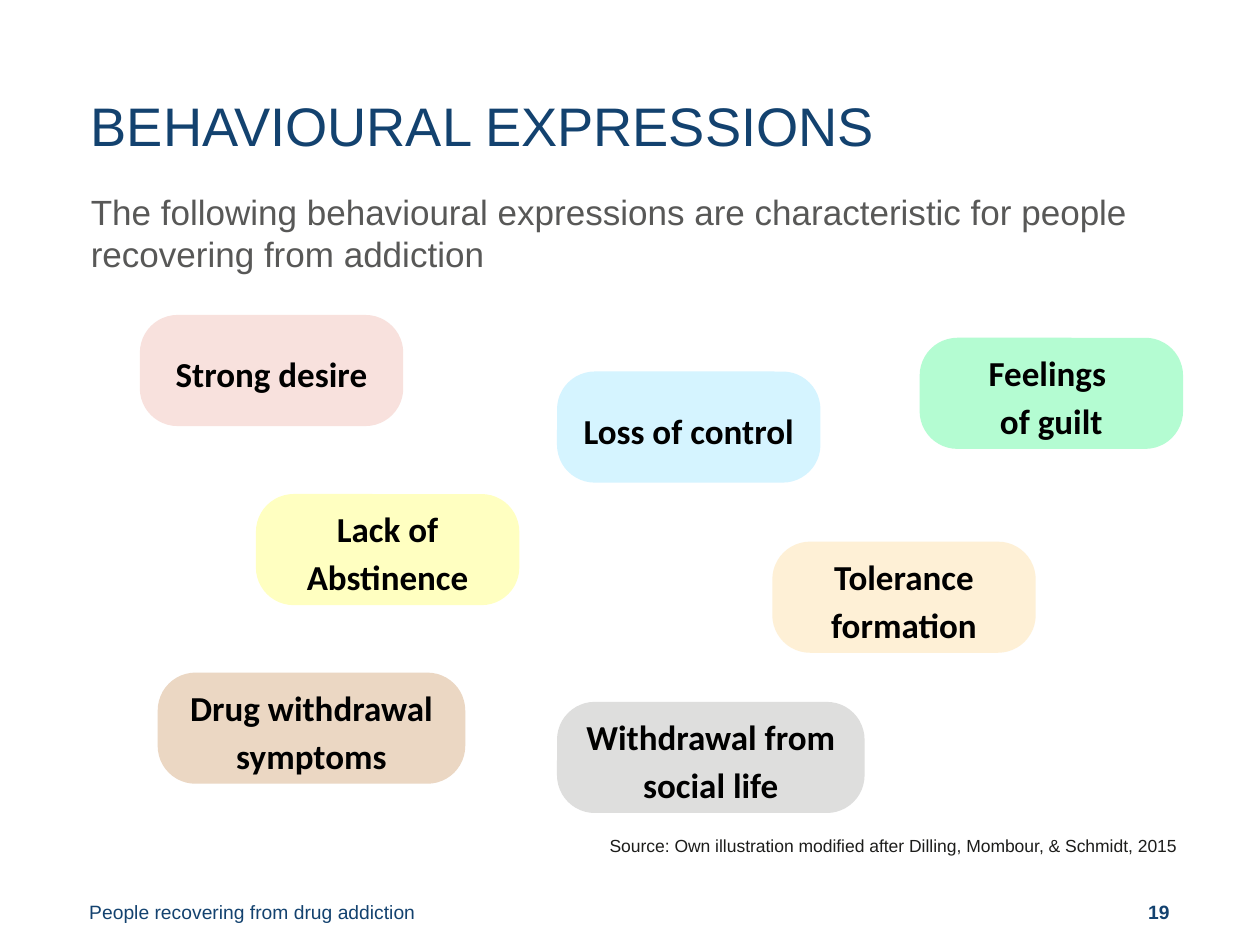
import pptx
import pptx.util
import pptx.dml.color
import pptx.enum.shapes
import pptx.enum.text
import pptx.oxml

Cm, Pt = pptx.util.Cm, pptx.util.Pt
Align = pptx.enum.text.PP_ALIGN
Anchor = pptx.enum.text.MSO_ANCHOR

# Content
TITLE = "BEHAVIOURAL EXPRESSIONS"
INTRO = ("The following behavioural expressions are characteristic "
         "for people recovering from addiction")
SOURCE = "Source: Own illustration modified after Dilling, Mombour, & Schmidt, 2015"
FOOTER = "People recovering from drug addiction"
PAGE = "19"

# Text, left and top in cm, width class, fill
EXPRESSIONS = [
    ("Strong desire", 2.82, 6.35, "narrow", "F8E1DD"),
    ("Loss of control", 11.23, 7.49, "narrow", "D5F4FF"),
    ("Lack of Abstinence", 5.16, 9.96, "narrow", "FFFFC1"),
    ("Tolerance formation", 15.57, 10.92, "narrow", "FEF0D6"),
    ("Drug withdrawal symptoms", 3.18, 13.56, "wide", "EBD7C3"),
    ("Withdrawal from social life", 11.23, 14.15, "wide", "DEDEDD"),
    ("Feelings \vof guilt", 18.54, 6.81, "narrow", "B4FCD2"),
]

# Theme: font, size, colour, bold
THEME = {
    "title": ("Arial", 31, "13426F", False),
    "intro": ("Arial", 20, "585857", False),
    "card": ("Calibri", 20, "000000", True),
    "source": ("Arial", 10, "1D1D1B", False),
    "footer": ("Arial", 11, "13426F", False),
    "page": ("Arial", 11, "13426F", True),
}
CARD_WIDTH = {"narrow": 5.31, "wide": 6.2}
CARD_HEIGHT = 2.24
CARD_ROUNDING = 0.34
MARGIN = 1.8
DEFAULT_INSETS = (0.25, 0.13, 0.25, 0.13)


def rgb(value):
    return pptx.dml.color.RGBColor.from_string(value)


def place(part, left, top, width, height):
    part.left, part.top = Cm(left), Cm(top)
    part.width, part.height = Cm(width), Cm(height)


def write(part, text, style, align=Align.LEFT, anchor=Anchor.TOP,
          insets=DEFAULT_INSETS, spacing=None):
    frame = part.text_frame
    frame.word_wrap = True
    frame.auto_size = pptx.enum.text.MSO_AUTO_SIZE.NONE
    frame.vertical_anchor = anchor
    (frame.margin_left, frame.margin_top,
     frame.margin_right, frame.margin_bottom) = map(Cm, insets)
    paragraph = frame.paragraphs[0]
    paragraph.text = text
    paragraph.alignment = align
    paragraph.line_spacing = spacing
    paragraph.space_before = Pt(0)
    face, size, colour, bold = THEME[style]
    for run in paragraph.runs:
        run.font.name, run.font.size, run.font.bold = face, Pt(size), bold
        run.font.color.rgb = rgb(colour)
    return paragraph


def add_text(slide, box, *args, **options):
    part = slide.shapes.add_textbox(*map(Cm, box))
    write(part, *args, **options)


def add_card(slide, text, left, top, width_class, fill):
    card = slide.shapes.add_shape(
        pptx.enum.shapes.MSO_SHAPE.ROUNDED_RECTANGLE,
        Cm(left), Cm(top), Cm(CARD_WIDTH[width_class]), Cm(CARD_HEIGHT))
    card.adjustments[0] = CARD_ROUNDING
    card.shadow.inherit = False
    card.fill.solid()
    card.fill.fore_color.rgb = rgb(fill)
    card.line.fill.background()
    write(card, text, "card", Align.CENTER, Anchor.MIDDLE, spacing=1.15)


def main():
    deck = pptx.Presentation()
    deck.slide_width, deck.slide_height = Cm(25.4), Cm(19.05)
    slide = deck.slides.add_slide(deck.slide_layouts[1])

    # Title and introduction
    title, intro = slide.shapes.title, slide.placeholders[1]
    place(title, MARGIN + 0.03, 1.85, 21.72, 2.13)
    write(title, TITLE, "title", insets=(0, 0.13, 0.25, 0.13), spacing=Pt(34))
    place(intro, MARGIN + 0.03, 3.73, 21.72, 2.34)
    lead = write(intro, INTRO, "intro", insets=(0, 0.1, 0.25, 0.13),
                 spacing=Pt(24))
    lead.space_after = Pt(18)
    properties = lead._p.get_or_add_pPr()
    properties.set("marL", "0")
    properties.set("indent", "0")
    properties.append(pptx.oxml.parse_xml(
        '<a:buNone xmlns:a="http://schemas.openxmlformats.org/drawingml/2006/main"/>'))

    # Expression cards
    for expression in EXPRESSIONS:
        add_card(slide, *expression)

    # Source, footer and page number
    add_text(slide, (12.04, 16.71, 12.14, 0.69), SOURCE, "source")
    add_text(slide, (0, 17.5, 8.59, 1.52), FOOTER, "footer",
             anchor=Anchor.BOTTOM, insets=(MARGIN, 0.13, 0, 0.41),
             spacing=Pt(13.3))
    add_text(slide, (19.66, 17.5, 5.72, 1.52), PAGE, "page", Align.RIGHT,
             Anchor.BOTTOM, (0, 0.13, MARGIN, 0.41), Pt(13.3))

    deck.save("out.pptx")


if __name__ == "__main__":
    main()
